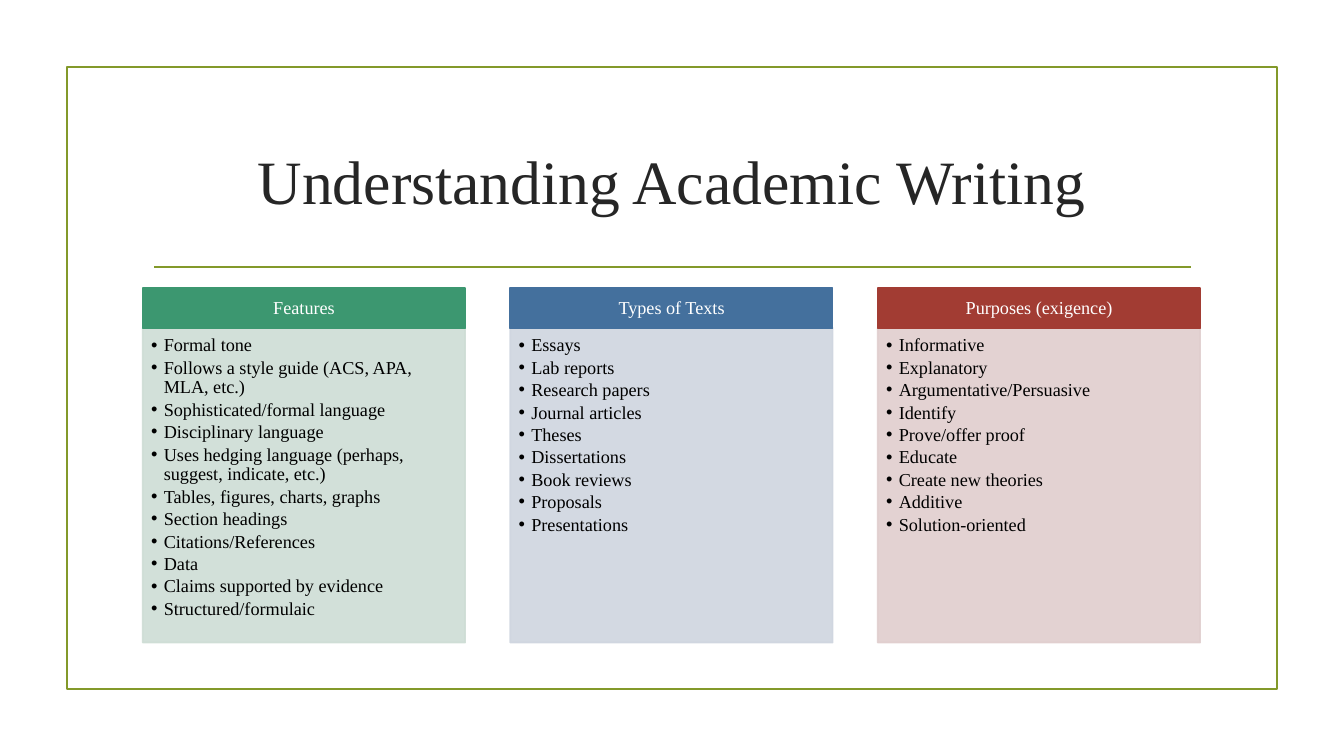
from lxml.etree import SubElement
from pptx import Presentation
from pptx.dml.color import RGBColor
from pptx.enum.shapes import MSO_CONNECTOR as Link, MSO_SHAPE as Form
from pptx.enum.text import MSO_ANCHOR as Anchor, MSO_AUTO_SIZE as Fit, PP_ALIGN as Align
from pptx.oxml.ns import qn
from pptx.util import Pt

SCALE = 9525
FACE = "Times New Roman"
OLIVE = RGBColor(0x83, 0x99, 0x2A)
INK = RGBColor(0x26, 0x26, 0x26)
BLACK = RGBColor(0, 0, 0)
WHITE = RGBColor(0xFF, 0xFF, 0xFF)
GREEN = RGBColor(0x3C, 0x97, 0x70)
MINT = RGBColor(0xCE, 0xDD, 0xD5)
BLUE = RGBColor(0x44, 0x70, 0x9D)
MIST = RGBColor(0xCF, 0xD5, 0xDF)
RED = RGBColor(0xA2, 0x3C, 0x33)
ROSE = RGBColor(0xE0, 0xCE, 0xCE)

LEFT, STEP, WIDE = 136, 350, 307
COLUMNS = [
    ("Features", GREEN, MINT, [
        "Formal tone",
        "Follows a style guide (ACS, APA, MLA, etc.)",
        "Sophisticated/formal language",
        "Disciplinary language",
        "Uses hedging language (perhaps, suggest, indicate, etc.)",
        "Tables, figures, charts, graphs",
        "Section headings",
        "Citations/References",
        "Data",
        "Claims supported by evidence",
        "Structured/formulaic",
    ]),
    ("Types of Texts", BLUE, MIST, [
        "Essays", "Lab reports", "Research papers", "Journal articles", "Theses",
        "Dissertations", "Book reviews", "Proposals", "Presentations",
    ]),
    ("Purposes (exigence)", RED, ROSE, [
        "Informative", "Explanatory", "Argumentative/Persuasive", "Identify",
        "Prove/offer proof", "Educate", "Create new theories", "Additive",
        "Solution-oriented",
    ]),
]


def px(num):
    """Turn pixels into EMU."""
    return num * SCALE


def style(item, **form):
    """Set each format value on an item."""
    for name, value in form.items():
        setattr(item, name, value)


def place(shape, left, top, width, height):
    """Move and size a shape."""
    style(shape, left=px(left), top=px(top), width=px(width), height=px(height))


def inset(frame, left, top, right, low, anchor):
    """Set the margins and anchor of a text frame."""
    style(frame, margin_left=px(left), margin_top=px(top), margin_right=px(right),
          margin_bottom=px(low), vertical_anchor=anchor,
          word_wrap=True, auto_size=Fit.NONE)


def write(para, text, size, color, **form):
    """Add formatted text to a paragraph."""
    style(para, **form)
    run = para.add_run()
    run.text = text
    style(run.font, name=FACE, size=Pt(size), bold=False)
    run.font.color.rgb = color


def stroke(line, color):
    """Give a line its colour and weight."""
    line.color.rgb = color
    line.width = Pt(1.25)


def paint(shape, color):
    """Fill and outline a shape in one colour."""
    shape.fill.solid()
    shape.fill.fore_color.rgb = color
    stroke(shape.line, color)


def fade(shape):
    """Make the fill and outline of a shape 90% opaque."""
    for tone in shape.element.spPr.iter(qn("a:srgbClr")):
        SubElement(tone, qn("a:alpha"), val="90000")


def bullet(para):
    """Add a hanging bullet to a paragraph."""
    props = para._p.get_or_add_pPr()
    props.set("marL", str(px(12)))
    props.set("indent", str(-px(12)))
    SubElement(props, qn("a:buChar"), char="•")


def border(shapes):
    """Draw the frame and the rule below the title."""
    box = shapes.add_shape(Form.RECTANGLE, px(64), px(64), px(1152), px(592))
    box.shadow.inherit = False
    box.fill.background()
    stroke(box.line, OLIVE)
    rule = shapes.add_connector(Link.STRAIGHT, px(147), px(254), px(1134), px(254))
    stroke(rule.line, OLIVE)
    SubElement(rule.element.spPr, qn("a:effectLst"))


def header(shapes, left, text, color):
    """Draw the heading of a column."""
    box = shapes.add_shape(Form.RECTANGLE, px(left), px(274), px(WIDE), px(39))
    box.shadow.inherit = False
    paint(box, color)
    inset(box.text_frame, 10, 6, 10, 6, Anchor.MIDDLE)
    write(box.text_frame.paragraphs[0], text, 13, WHITE,
          alignment=Align.CENTER, line_spacing=0.9)


def listing(body, left, items, color):
    """Fill a body placeholder with a bulleted list."""
    place(body, left, 312, WIDE, 300)
    paint(body, color)
    fade(body)
    frame = body.text_frame
    inset(frame, 8, 8, 10, 11, Anchor.TOP)
    for num, item in enumerate(items):
        para = frame.add_paragraph() if num else frame.paragraphs[0]
        bullet(para)
        write(para, item, 13, BLACK, alignment=Align.LEFT, line_spacing=0.9,
              space_before=Pt(0), space_after=Pt(1.95))


def main():
    """Build and save the slide."""
    deck = Presentation()
    style(deck, slide_width=px(1280), slide_height=px(720))
    slide = deck.slides.add_slide(deck.slide_layouts[4])
    shapes = slide.shapes
    title, *bodies, spare = slide.placeholders
    spare.element.getparent().remove(spare.element)
    place(title, LEFT, 103, 1008, 137)
    inset(title.text_frame, 10, 5, 10, 5, Anchor.MIDDLE)
    write(title.text_frame.paragraphs[0], "Understanding Academic Writing", 44, INK,
          alignment=Align.CENTER)
    border(shapes)
    for num, (head, dark, pale, items) in enumerate(COLUMNS):
        left = LEFT + num * STEP
        header(shapes, left, head, dark)
        listing(bodies[num], left, items, pale)
    for extra in list(slide.placeholders):
        if not extra.text_frame.text:
            extra.element.getparent().remove(extra.element)
    deck.save("out.pptx")


if __name__ == "__main__":
    main()
